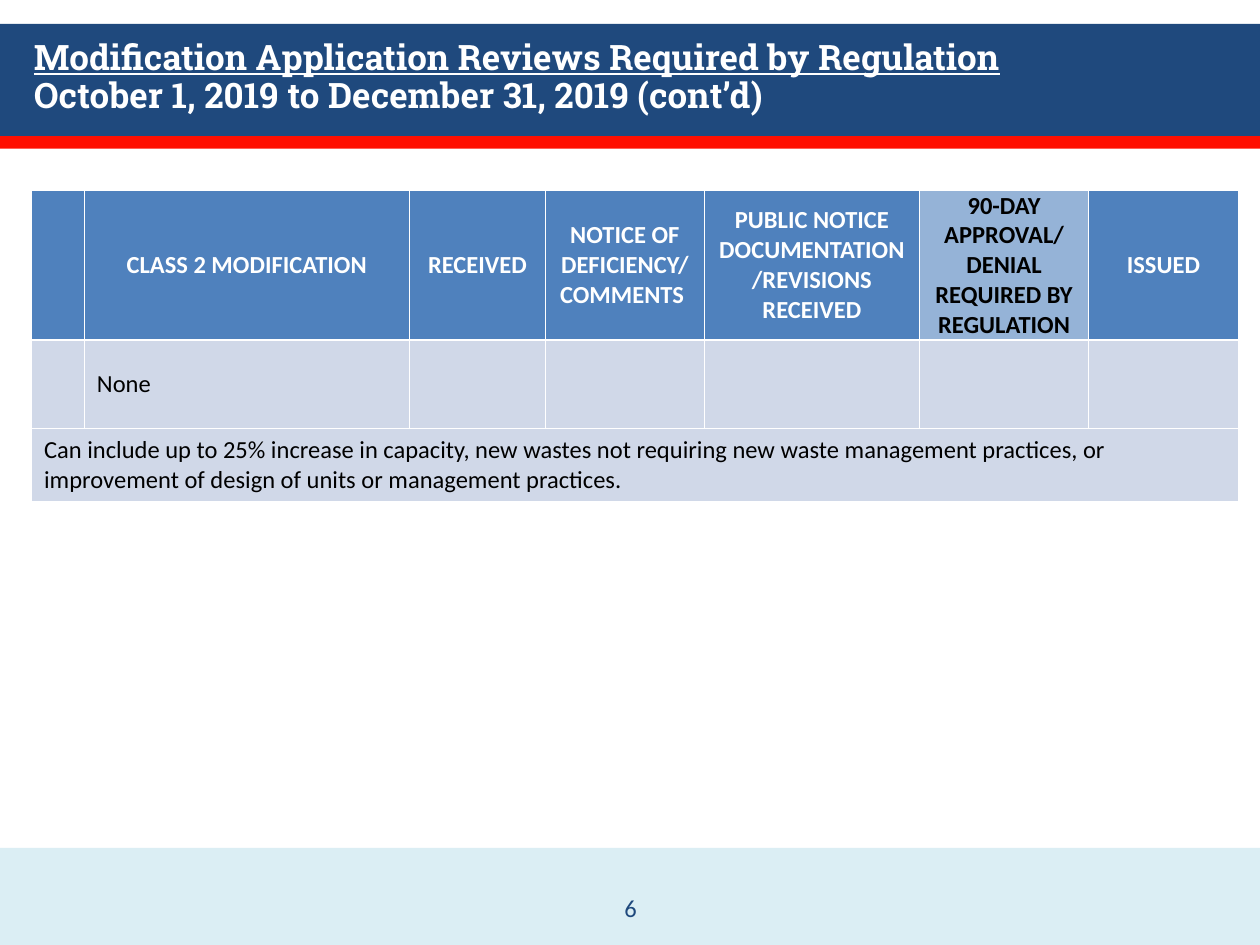
from lxml import etree
from pptx import Presentation
from pptx.dml.color import RGBColor
from pptx.enum import shapes, text
from pptx.oxml.ns import qn
from pptx.util import Inches, Pt

COLORS = {
    "navy": "1F497D", "red": "FF0F00", "pale": "DBEEF4", "blue": "4F81BD",
    "sky": "95B3D7", "body": "D0D8E8", "white": "FFFFFF", "black": "000000",
}
BANDS = [(0.19, 0.89, "navy"), (1.08, 0.1, "red"), (6.73, 0.77, "pale")]
TITLE = [
    "Modification Application Reviews Required by Regulation",
    "October 1, 2019 to December 31, 2019 (cont’d)",
]
HEADS = [
    [""],
    ["CLASS 2 MODIFICATION"],
    ["RECEIVED"],
    ["NOTICE OF DEFICIENCY/ COMMENTS "],
    ["PUBLIC NOTICE DOCUMENTATION/REVISIONS RECEIVED"],
    ["90-DAY APPROVAL/ DENIAL", "REQUIRED BY REGULATION"],
    ["ISSUED"],
]
KEY = 5  # the highlighted deadline column
ENTRY = ["", "None", "", "", "", "", ""]
NOTE = [
    "Can include up to 25% increase in capacity, new wastes not requiring "
    "new waste management practices, or",
    "improvement of design of units or management practices.",
]
PAGE = "6"
COLS = [0.42, 2.58, 1.08, 1.26, 1.71, 1.34, 1.19]
ROWS = [1.19, 0.7, 0.58]
CENTER = text.PP_ALIGN.CENTER
MIDDLE = text.MSO_ANCHOR.MIDDLE


def rgb(name):
    return RGBColor.from_string(COLORS[name])


def write(frame, lines, color, size=14, name="Calibri", bold=False, align=None):
    frame.word_wrap = True
    for i, line in enumerate(lines):
        para = frame.paragraphs[0] if i == 0 else frame.add_paragraph()
        para.text = line
        para.alignment = align
        font = para.font
        font.name, font.size, font.bold = name, Pt(size), bold
        font.color.rgb = rgb(color)


def border(cell):
    """Give the cell thin white edges, placed before its fill."""
    props = cell._tc.get_or_add_tcPr()
    for i, side in enumerate(("lnL", "lnR", "lnT", "lnB")):
        line = etree.Element(qn("a:" + side), w=str(Pt(1)))
        fill = etree.SubElement(line, qn("a:solidFill"))
        etree.SubElement(fill, qn("a:srgbClr"), val=COLORS["white"])
        props.insert(i, line)


def style(cell, fill, side, edge):
    cell.fill.solid()
    cell.fill.fore_color.rgb = rgb(fill)
    cell.vertical_anchor = MIDDLE
    cell.margin_left = cell.margin_right = Inches(side)
    cell.margin_top = cell.margin_bottom = Inches(edge)
    border(cell)


def add_text(slide, box, anchor):
    frame = slide.shapes.add_textbox(*map(Inches, box)).text_frame
    frame.vertical_anchor = anchor
    return frame


def add_grid(slide):
    grid = slide.shapes.add_table(
        len(ROWS), len(COLS), Inches(0.25), Inches(1.51),
        Inches(sum(COLS)), Inches(sum(ROWS))).table
    for col, width in zip(grid.columns, COLS):
        col.width = Inches(width)
    for row, height in zip(grid.rows, ROWS):
        row.height = Inches(height)
    for i, (head, entry) in enumerate(zip(HEADS, ENTRY)):
        top, mid, low = (grid.cell(r, i) for r in range(len(ROWS)))
        style(top, "sky" if i == KEY else "blue", 0.08, 0)
        style(mid, "body", 0.1, 0)
        style(low, "body", 0.1, 0.05)
        write(top.text_frame, head, "black" if i == KEY else "white",
              bold=True, align=CENTER)
        write(mid.text_frame, [entry], "black")
    note = grid.cell(2, 0)
    note.merge(grid.cell(2, len(COLS) - 1))
    write(note.text_frame, NOTE, "black")


def main():
    deck = Presentation()
    deck.slide_width, deck.slide_height = Inches(10), Inches(7.5)
    slide = deck.slides.add_slide(deck.slide_layouts[6])

    for top, height, color in BANDS:
        band = slide.shapes.add_shape(
            shapes.MSO_SHAPE.RECTANGLE, 0, Inches(top), Inches(10), Inches(height))
        band.shadow.inherit = False
        band.fill.solid()
        band.fill.fore_color.rgb = rgb(color)
        band.line.fill.background()

    title = add_text(slide, (0.17, 0.17, 9.67, 0.9), MIDDLE)
    write(title, TITLE, "white", 20, "Roboto Slab", bold=True)
    for para in title.paragraphs:
        para.line_spacing = 0.9
    title.paragraphs[0].font.underline = True

    add_grid(slide)
    page = add_text(slide, (3.42, 6.97, 3.17, 0.4), text.MSO_ANCHOR.BOTTOM)
    write(page, [PAGE], "navy", align=CENTER)
    deck.save("out.pptx")


if __name__ == "__main__":
    main()
